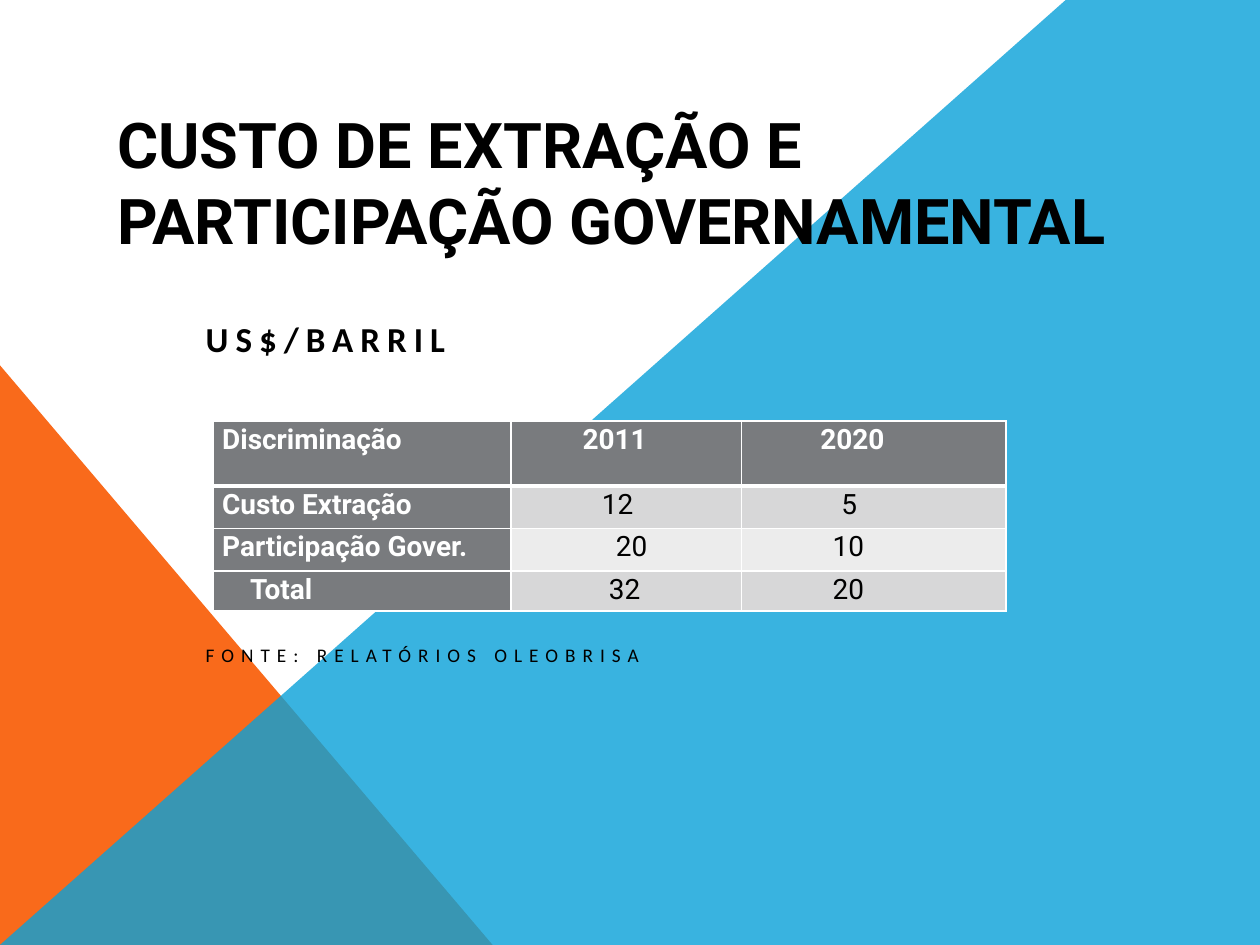
from lxml import etree
from pptx import Presentation
from pptx.dml.color import RGBColor
from pptx.enum.shapes import MSO_SHAPE
from pptx.enum.text import MSO_ANCHOR, MSO_AUTO_SIZE, PP_ALIGN
from pptx.oxml.ns import qn
from pptx.util import Pt

RIGHT_TRIANGLE = MSO_SHAPE.RIGHT_TRIANGLE
TOP, BOTTOM = MSO_ANCHOR.TOP, MSO_ANCHOR.BOTTOM
NO_AUTOSIZE = MSO_AUTO_SIZE.NONE
LEFT = PP_ALIGN.LEFT

THEME = {
    "black": RGBColor.from_string("000000"),
    "white": RGBColor.from_string("FFFFFF"),
    "orange": RGBColor.from_string("F96A1B"),
    "blue": RGBColor.from_string("08A1D9"),
    "header": RGBColor.from_string("797B7E"),
    "bands": [RGBColor.from_string("D7D7D8"), RGBColor.from_string("ECECEC")],
    "heading_font": "Roboto",
    "body_font": "Calibri",
    "title_size": Pt(36),
    "unit_size": Pt(20),
    "table_size": Pt(16),
    "source_size": Pt(11),
}


def write_text(frame, text, color, frame_format, font_format):
    for name, value in frame_format.items():
        setattr(frame, name, value)
    paragraph = frame.paragraphs[0]
    paragraph.alignment = LEFT
    run = paragraph.add_run()
    run.text = text
    run.font.color.rgb = color
    for name, value in font_format.items():
        setattr(run.font, name, value)
    return paragraph


def add_border(cell, side, width):
    line = etree.SubElement(cell._tc.get_or_add_tcPr(), qn(f"a:{side}"), w=str(Pt(width)))
    fill = etree.SubElement(line, qn("a:solidFill"))
    etree.SubElement(fill, qn("a:srgbClr"), val=str(THEME["white"]))


presentation = Presentation()
presentation.slide_width, presentation.slide_height = Pt(720), Pt(540)
slide = presentation.slides.add_slide(presentation.slide_layouts[5])
slide.background.fill.solid()
slide.background.fill.fore_color.rgb = THEME["white"]

triangle = slide.shapes.add_shape(RIGHT_TRIANGLE, Pt(0), Pt(208.8), Pt(281.5), Pt(331.2))
builder = slide.shapes.build_freeform(0, 540, scale=Pt(1))
builder.add_line_segments([(609, 0), (720, 0), (720, 540)], close=True)
diagonal = builder.convert_to_shape()
for shape, color in ((triangle, "orange"), (diagonal, "blue")):
    shape.shadow.inherit = False
    shape.fill.solid()
    shape.fill.fore_color.rgb = THEME[color]
    shape.line.fill.background()
blue_color = diagonal._element.spPr.find(qn("a:solidFill")).find(qn("a:srgbClr"))
etree.SubElement(blue_color, qn("a:alpha"), val="80000")

title = slide.shapes.title
title_position = {"left": Pt(59.8), "top": Pt(31.7), "width": Pt(629.3), "height": Pt(116)}
for name, value in title_position.items():
    setattr(title, name, value)
title_frame = {
    "word_wrap": True, "auto_size": NO_AUTOSIZE, "vertical_anchor": BOTTOM,
    "margin_left": Pt(7.2), "margin_right": Pt(7.2), "margin_top": Pt(3.6), "margin_bottom": Pt(0.7),
}
title_font = {"name": THEME["heading_font"], "size": THEME["title_size"], "bold": True}
write_text(title.text_frame, "CUSTO DE EXTRAÇÃO E PARTICIPAÇÃO GOVERNAMENTAL",
           THEME["black"], title_frame, title_font)
slide.shapes._spTree.append(title._element)

caption_frame = {
    "word_wrap": True, "auto_size": NO_AUTOSIZE, "vertical_anchor": TOP,
    "margin_left": Pt(7.2), "margin_right": Pt(7.2), "margin_top": Pt(0), "margin_bottom": Pt(0),
}
captions = [
    ("US$/BARRIL", 181.5, 28, "unit_size", True),
    ("FONTE: RELATÓRIOS OLEOBRISA", 367.8, 18, "source_size", False),
]
for text, top, height, size, bold in captions:
    box = slide.shapes.add_textbox(Pt(110.5), Pt(top), Pt(504), Pt(height))
    caption_font = {"name": THEME["body_font"], "size": THEME[size], "bold": bold}
    paragraph = write_text(box.text_frame, text, THEME["black"], caption_frame, caption_font)
    paragraph.runs[0]._r.get_or_add_rPr().set("spc", "400")

rows = [
    [("Discriminação", 0), ("2011", 36), ("2020", 40)],
    [("Custo Extração", 0), ("12", 47), ("5", 52)],
    [("Participação Gover.", 0), ("20", 55), ("10", 47)],
    [("Total", 16), ("32", 51), ("20", 47)],
]
column_widths = [170, 131.8, 151]
row_heights = [37, 24.3, 24.3, 23]
table = slide.shapes.add_table(len(rows), len(column_widths), Pt(122), Pt(240.7),
                               Pt(sum(column_widths)), Pt(sum(row_heights))).table
for column, width in zip(table.columns, column_widths):
    column.width = Pt(width)
for row, height in zip(table.rows, row_heights):
    row.height = Pt(height)

for row_index, row in enumerate(rows):
    for column_index, (text, indent) in enumerate(row):
        cell = table.cell(row_index, column_index)
        is_header = row_index == 0 or column_index == 0
        cell_format = {
            "margin_left": Pt(5 + indent), "margin_right": Pt(5),
            "margin_top": Pt(0), "margin_bottom": Pt(0), "vertical_anchor": TOP,
        }
        for name, value in cell_format.items():
            setattr(cell, name, value)
        borders = {
            "lnL": 1, "lnR": 1,
            "lnT": 3 if row_index == 1 else 1,
            "lnB": 3 if row_index == 0 else 1,
        }
        for side, border_width in borders.items():
            add_border(cell, side, border_width)
        cell.fill.solid()
        cell.fill.fore_color.rgb = THEME["header"] if is_header else THEME["bands"][(row_index + 1) % 2]
        cell_font = {"name": THEME["heading_font"], "size": THEME["table_size"], "bold": is_header}
        paragraph = write_text(cell.text_frame, text, THEME["white" if is_header else "black"], {}, cell_font)
        paragraph.line_spacing = 1.07

presentation.save("out.pptx")
